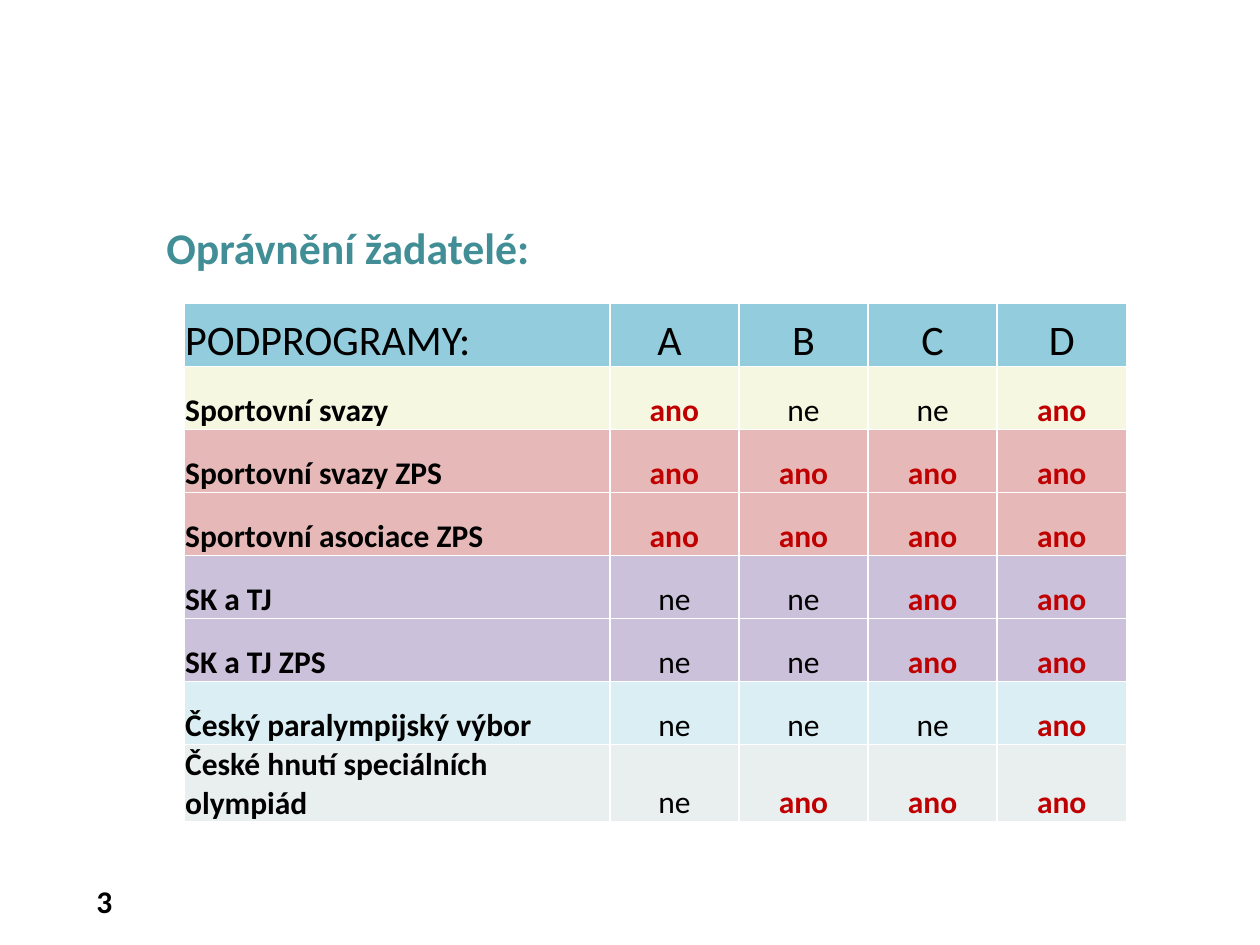
from dataclasses import dataclass

from lxml.etree import SubElement
from pptx import Presentation
from pptx.dml.color import RGBColor
from pptx.enum.text import MSO_ANCHOR as Anchor, PP_ALIGN as Align
from pptx.oxml.ns import qn
from pptx.util import Inches, Pt

BLACK, WHITE, TEAL, RED = "000000", "FFFFFF", "418E96", "C00000"
HEADER_FILL = "93CDDD"
LABEL_WIDTH, ANSWER_WIDTH, ROW_HEIGHT = 3.38, 1.025, 0.5


@dataclass(frozen=True)
class Applicant:
    label: str
    answers: tuple[str, ...]
    fill: str


SUBPROGRAMMES = ("A ", "B", "C", "D")
APPLICANTS = (
    Applicant("Sportovní svazy", ("ano", "ne", "ne", "ano"), "F6F7E1"),
    Applicant("Sportovní svazy ZPS", ("ano",) * 4, "E6B9B8"),
    Applicant("Sportovní asociace ZPS", ("ano",) * 4, "E6B9B8"),
    Applicant("SK a TJ", ("ne", "ne", "ano", "ano"), "CCC1DA"),
    Applicant("SK a TJ ZPS", ("ne", "ne", "ano", "ano"), "CCC1DA"),
    Applicant("Český paralympijský výbor", ("ne", "ne", "ne", "ano"), "DBEEF4"),
    Applicant("České hnutí speciálních olympiád", ("ne", "ano", "ano", "ano"), "E9EEEF"),
)


def rgb(value: str) -> RGBColor:
    return RGBColor.from_string(value)


def add_run(paragraph, text: str, size: float, color: str, bold: bool, align=Align.LEFT) -> None:
    paragraph.alignment = align
    run = paragraph.add_run()
    run.text = text
    run.font.name = "Calibri"
    run.font.size = Pt(size)
    run.font.bold = bold
    run.font.color.rgb = rgb(color)


def add_borders(cell) -> None:
    properties = cell._tc.get_or_add_tcPr()
    for side in ("lnL", "lnR", "lnT", "lnB"):
        border = SubElement(properties, qn(f"a:{side}"), w=str(Pt(1)))
        SubElement(SubElement(border, qn("a:solidFill")), qn("a:srgbClr"), val=WHITE)


def fill_cell(cell, text: str, size: float, color: str, bold: bool, align, fill: str) -> None:
    cell.vertical_anchor = Anchor.BOTTOM
    cell.margin_left = cell.margin_right = cell.margin_top = Inches(0.01)
    cell.margin_bottom = 0
    add_borders(cell)
    cell.fill.solid()
    cell.fill.fore_color.rgb = rgb(fill)
    add_run(cell.text_frame.paragraphs[0], text, size, color, bold, align)


def add_heading(slide) -> None:
    heading = slide.placeholders[1]
    heading.left, heading.top = Inches(1.22), Inches(1.7)
    heading.width, heading.height = Inches(8.28), Inches(5.51)
    paragraph = heading.text_frame.paragraphs[0]
    properties = paragraph._p.get_or_add_pPr()
    properties.set("marL", "0")
    properties.set("indent", "0")
    SubElement(properties, qn("a:buNone"))
    paragraph.space_before = Pt(0)
    add_run(paragraph, "Oprávnění žadatelé:", 25, TEAL, True)


def add_eligibility_table(slide) -> None:
    row_count, column_count = len(APPLICANTS) + 1, len(SUBPROGRAMMES) + 1
    width = LABEL_WIDTH + ANSWER_WIDTH * len(SUBPROGRAMMES)
    eligibility = slide.shapes.add_table(
        row_count, column_count, Inches(1.46), Inches(2.41),
        Inches(width), Inches(ROW_HEIGHT * row_count),
    ).table
    for index, column in enumerate(eligibility.columns):
        column.width = Inches(ANSWER_WIDTH if index else LABEL_WIDTH)

    for index, text in enumerate(("PODPROGRAMY:", *SUBPROGRAMMES)):
        align = Align.CENTER if index else Align.LEFT
        fill_cell(eligibility.cell(0, index), text, 24, BLACK, False, align, HEADER_FILL)

    for row, applicant in enumerate(APPLICANTS, 1):
        fill_cell(eligibility.cell(row, 0), applicant.label, 18, BLACK, True,
                  Align.LEFT, applicant.fill)
        for column, answer in enumerate(applicant.answers, 1):
            eligible = answer == "ano"
            fill_cell(eligibility.cell(row, column), answer, 18, RED if eligible else BLACK,
                      eligible, Align.CENTER, applicant.fill)


def add_page_number(slide) -> None:
    frame = slide.shapes.add_textbox(
        Inches(0.28), Inches(6.95), Inches(0.71), Inches(0.4)
    ).text_frame
    frame.word_wrap = True
    frame.vertical_anchor = Anchor.MIDDLE
    add_run(frame.paragraphs[0], "3", 18, BLACK, True, Align.RIGHT)


def main() -> None:
    presentation = Presentation()
    presentation.slide_width, presentation.slide_height = Inches(10), Inches(7.5)
    slide = presentation.slides.add_slide(presentation.slide_layouts[1])
    empty_title = slide.shapes.title.element
    empty_title.getparent().remove(empty_title)
    add_page_number(slide)
    add_heading(slide)
    add_eligibility_table(slide)
    presentation.save("out.pptx")


if __name__ == "__main__":
    main()
